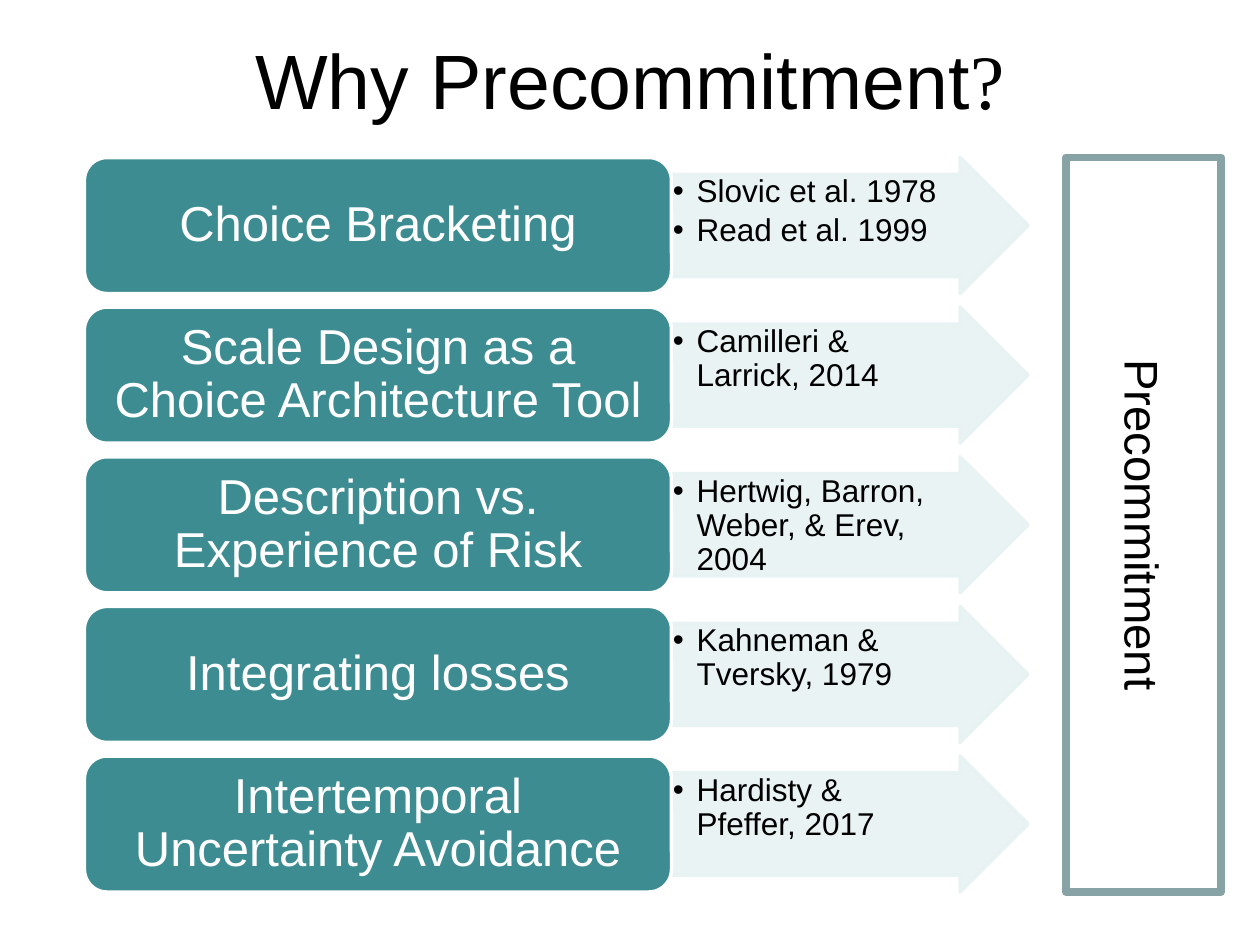
from dataclasses import dataclass

from lxml.etree import SubElement
from pptx import Presentation
from pptx.dml.color import RGBColor
from pptx.enum.shapes import MSO_SHAPE as Preset
from pptx.enum.text import MSO_ANCHOR as Anchor, PP_ALIGN as Align
from pptx.oxml.ns import qn
from pptx.util import Inches, Pt

COLORS = {
    "ink": "000000",
    "paper": "FFFFFF",
    "teal": "3C8C92",
    "mist": "E7F2F3",
    "frame": "88A3A5",
}

# Grid: five rows, a column of labels and a column of arrows
GRID_TOP, ROW_PITCH, ROW_HEIGHT = 1.25, 1.1875, 1.08
LABEL_LEFT, LABEL_WIDTH = 0.67, 4.66
ARROW_LEFT, ARROW_WIDTH = LABEL_LEFT + LABEL_WIDTH, 2.83
BULLET_INDENT = 0.19


@dataclass
class Reason:
    label: str
    sources: list[str]


REASONS = [
    Reason("Choice Bracketing", ["Slovic et al. 1978", "Read et al. 1999"]),
    Reason("Scale Design as a Choice Architecture Tool", ["Camilleri & Larrick, 2014"]),
    Reason("Description vs. Experience of Risk", ["Hertwig, Barron, Weber, & Erev, 2004"]),
    Reason("Integrating losses", ["Kahneman & Tversky, 1979"]),
    Reason("Intertemporal Uncertainty Avoidance", ["Hardisty & Pfeffer, 2017"]),
]


def rgb(name: str) -> RGBColor:
    return RGBColor.from_string(COLORS[name])


def add_box(page, preset, left: float, top: float, width: float, height: float,
            fill: str | None, line: str, weight: float):
    box = page.shapes.add_shape(
        preset, Inches(left), Inches(top), Inches(width), Inches(height))
    box.shadow.inherit = False
    if fill:
        box.fill.solid()
        box.fill.fore_color.rgb = rgb(fill)
    else:
        box.fill.background()
    box.line.color.rgb = rgb(line)
    box.line.width = Pt(weight)
    return box


def set_frame(box, anchor, left: float, top: float, right: float, bottom: float):
    frame = box.text_frame
    frame.word_wrap = True
    frame.vertical_anchor = anchor
    frame.margin_left, frame.margin_top = Inches(left), Inches(top)
    frame.margin_right, frame.margin_bottom = Inches(right), Inches(bottom)
    return frame


def add_span(para, text: str, size: float, color: str = "ink", font: str = "Arial") -> None:
    span = para.add_run()
    span.text = text
    span.font.name = font
    span.font.size = Pt(size)
    span.font.color.rgb = rgb(color)


def set_bullet(para) -> None:
    props = para._p.get_or_add_pPr()
    props.set("marL", str(Inches(BULLET_INDENT)))
    props.set("indent", str(-Inches(BULLET_INDENT)))
    SubElement(props, qn("a:buFont")).set("typeface", "Arial")
    SubElement(props, qn("a:buChar")).set("char", "•")


def set_opacity(box, percent: int) -> None:
    for color in box._element.spPr.iter(qn("a:srgbClr")):
        SubElement(color, qn("a:alpha")).set("val", str(percent * 1000))


def add_title(page) -> None:
    box = page.shapes.add_textbox(Inches(0.5), 0, Inches(9), Inches(1.25))
    para = set_frame(box, Anchor.MIDDLE, 0.1, 0.05, 0.1, 0.05).paragraphs[0]
    para.alignment = Align.CENTER
    add_span(para, "Why Precommitment", 44)
    add_span(para, "?", 44, font="Times New Roman")


def add_sources(page, top: float, sources: list[str]) -> None:
    arrow = add_box(page, Preset.RIGHT_ARROW, ARROW_LEFT, top,
                    ARROW_WIDTH, ROW_HEIGHT, "mist", "mist", 2)
    arrow.adjustments[0], arrow.adjustments[1] = 0.75, 0.5
    set_opacity(arrow, 90)
    # The wide right margin keeps the text out of the arrowhead
    frame = set_frame(arrow, Anchor.TOP, 0.01, 0.01, 0.27, 0.01)
    for index, source in enumerate(sources):
        para = frame.add_paragraph() if index else frame.paragraphs[0]
        para.alignment = Align.LEFT
        para.line_spacing = 0.9
        para.space_before = Pt(2.7 if index else 0)
        set_bullet(para)
        add_span(para, source, 18)


def add_label(page, top: float, label: str) -> None:
    box = add_box(page, Preset.ROUNDED_RECTANGLE, LABEL_LEFT, top,
                  LABEL_WIDTH, ROW_HEIGHT, "teal", "paper", 2)
    box.adjustments[0] = 0.167
    para = set_frame(box, Anchor.MIDDLE, 0.12, 0.06, 0.12, 0.06).paragraphs[0]
    para.alignment = Align.CENTER
    para.line_spacing = 0.9
    add_span(para, label, 28, "paper")


def add_outcome(page) -> None:
    box = add_box(page, Preset.RECTANGLE, 6.16, 3.55, 5.83, 1.23, None, "frame", 4.5)
    box.rotation = 90
    para = set_frame(box, Anchor.MIDDLE, 0.1, 0.05, 0.1, 0.05).paragraphs[0]
    para.alignment = Align.CENTER
    add_span(para, "Precommitment", 27)


def main() -> None:
    deck = Presentation()
    deck.slide_width, deck.slide_height = Inches(10), Inches(7.5)
    page = deck.slides.add_slide(deck.slide_layouts[6])

    add_title(page)
    for row, reason in enumerate(REASONS):
        top = GRID_TOP + row * ROW_PITCH
        add_sources(page, top, reason.sources)
        add_label(page, top, reason.label)
    add_outcome(page)

    deck.save("out.pptx")


if __name__ == "__main__":
    main()
